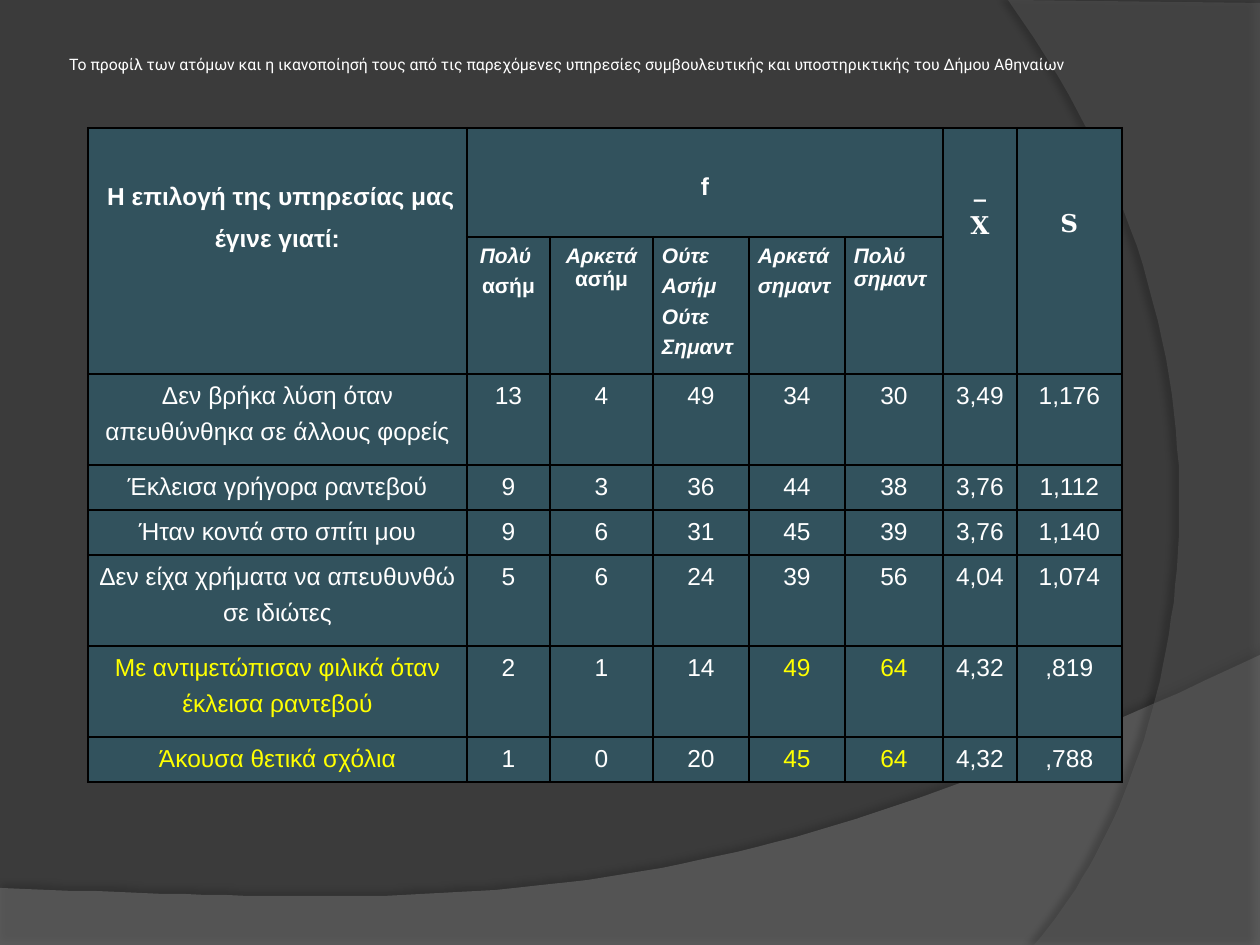
from pptx import Presentation, util as u
from pptx.dml.color import RGBColor
from pptx.enum import text
from pptx.oxml import parse_xml
from pptx.oxml.ns import nsdecls

PX = 914400 / 126
BACK = RGBColor(0x3B, 0x3B, 0x3B)
WAVE = RGBColor(0x7F, 0x7F, 0x7F)
ARC = RGBColor(0x5E, 0x5E, 0x5E)
TEAL = RGBColor(0x32, 0x52, 0x5D)
WHITE = RGBColor(0xFF, 0xFF, 0xFF)
GOLD = RGBColor(0xFF, 0xFF, 0x00)
BLACK = RGBColor(0, 0, 0)
MID = text.PP_ALIGN.CENTER
LEFT = text.PP_ALIGN.LEFT

COLS = [379, 83, 103, 96, 96, 98, 74, 105]
ROWS = [109, 137, 91, 45, 45, 91, 91, 45]
THICK_X = {0, 1, 6, 7, 8}
THICK_Y = {0, 1, 2, 8}

BODY = dict(name="Arial", size=u.Pt(14), bold=False, italic=False)
HEAD = dict(BODY, bold=True)
MATH = dict(HEAD, name="DejaVu Serif")
SUB = dict(HEAD, size=u.Pt(12))
LEAN = dict(SUB, italic=True)

TITLE = ("Το προφίλ των ατόμων και η ικανοποίησή τους από τις παρεχόμενες "
         "υπηρεσίες συμβουλευτικής και υποστηρικτικής του Δήμου Αθηναίων")
TOPS = [
    (0, 42, [(" Η επιλογή της υπηρεσίας μας έγινε γιατί:", 1.5)], HEAD),
    (1, 37, [("f", 1.3)], HEAD),
    (6, 37, [("_", 1.3), ("Χ", 1.3)], MATH),
    (7, 73, [("S", 1.3)], MATH),
]
SUBS = [
    (MID, [("Πολύ ", 1.3, LEAN), ("ασήμ", 1.3, SUB)]),
    (MID, [("Αρκετά", 1.3, LEAN), ("ασήμ", 1, SUB)]),
    (LEFT, [(word, 1.3, LEAN) for word in ("Ούτε", "Ασήμ", "Ούτε", "Σημαντ")]),
    (LEFT, [("Αρκετά", 1.3, LEAN), ("σημαντ", 1.3, LEAN)]),
    (LEFT, [("Πολύ", 1.3, LEAN), ("σημαντ", 1, LEAN)]),
]
DATA = [
    ("Δεν βρήκα λύση όταν απευθύνθηκα σε άλλους φορείς", "13 4 49 34 30 3,49 1,176"),
    ("Έκλεισα γρήγορα ραντεβού", "9 3 36 44 38 3,76 1,112"),
    ("Ήταν κοντά στο σπίτι μου", "9 6 31 45 39 3,76 1,140"),
    ("Δεν είχα χρήματα να απευθυνθώ σε ιδιώτες", "5 6 24 39 56 4,04 1,074"),
    ("Με αντιμετώπισαν φιλικά όταν έκλεισα ραντεβού", "2 1 14 49 64 4,32 ,819"),
    ("Άκουσα θετικά σχόλια", "1 0 20 45 64 4,32 ,788"),
]
GOLD_ROWS = {6, 7}
GOLD_COLS = {0, 4, 5}


def px(n):
    return u.Emu(round(n * PX))


def put(obj, vals):
    for key, val in vals.items():
        setattr(obj, key, val)


def curve(p, steps=60):
    pts = []
    for i in range(1, steps + 1):
        t = i / steps
        mix = ((1 - t) ** 3, 3 * t * (1 - t) ** 2, 3 * t * t * (1 - t), t ** 3)
        pts.append(tuple(sum(m * q[k] for m, q in zip(mix, p)) for k in (0, 1)))
    return pts


def sweep(slide, edge, bend, color, alpha, shade):
    form = slide.shapes.build_freeform(*edge[0], scale=PX)
    form.add_line_segments(edge[1:] + curve([edge[-1]] + bend), close=True)
    shape = form.convert_to_shape()
    shape.fill.solid()
    shape.fill.fore_color.rgb = color
    shape.line.fill.background()
    shape.shadow.inherit = False
    props = shape._element.spPr
    tint = props.find(".//{*}srgbClr")
    tint.append(parse_xml(f'<a:alpha {nsdecls("a")} val="{alpha * 1000}"/>'))
    dark, dist, turn = shade
    props.find("{*}effectLst").append(parse_xml(
        f'<a:outerShdw {nsdecls("a")} blurRad="{u.Pt(4)}" dist="{u.Pt(dist)}" '
        f'dir="{turn * 60000}" rotWithShape="0"><a:srgbClr val="{BLACK}">'
        f'<a:alpha val="{dark * 1000}"/></a:srgbClr></a:outerShdw>'))


def head(slide):
    title = slide.shapes.title
    put(title, dict(left=px(63), top=px(38), width=px(1029), height=px(70)))
    frame = title.text_frame
    put(frame, dict(word_wrap=True, auto_size=text.MSO_AUTO_SIZE.NONE,
                    vertical_anchor=text.MSO_ANCHOR.MIDDLE, margin_left=px(6),
                    margin_right=px(6), margin_top=px(6), margin_bottom=px(24)))
    frame.text = TITLE
    para = frame.paragraphs[0]
    para.alignment = LEFT
    font = para.runs[0].font
    put(font, dict(name="Roboto", size=u.Pt(9), bold=False))
    font.color.rgb = WHITE
    slide.shapes._spTree.append(title._element)


def write(cell, lines, align=MID, color=WHITE, top=0):
    put(cell, dict(margin_left=px(9), margin_right=px(9), margin_top=px(top),
                   margin_bottom=0, vertical_anchor=text.MSO_ANCHOR.TOP))
    frame = cell.text_frame
    for i, (word, gap, style) in enumerate(lines):
        para = frame.add_paragraph() if i else frame.paragraphs[0]
        put(para, dict(alignment=align, line_spacing=float(gap)))
        run = para.add_run()
        run.text = word
        put(run.font, style)
        run.font.color.rgb = color


def frame_cell(cell, row, col):
    props = cell._tc.get_or_add_tcPr()
    right = col + cell.span_width if cell.is_merge_origin else col + 1
    base = row + cell.span_height if cell.is_merge_origin else row + 1
    sides = [("L", col in THICK_X), ("R", right in THICK_X),
             ("T", row in THICK_Y), ("B", base in THICK_Y)]
    for side, thick in sides:
        props.append(parse_xml(
            f'<a:ln{side} {nsdecls("a")} w="{u.Pt(1.5 if thick else 1)}">'
            f'<a:solidFill><a:srgbClr val="{BLACK}"/></a:solidFill></a:ln{side}>'))
    cell.fill.solid()
    cell.fill.fore_color.rgb = TEAL


def grid(slide):
    table = slide.shapes.add_table(len(ROWS), len(COLS), px(88), px(128),
                                   px(sum(COLS)), px(sum(ROWS))).table
    put(table, dict(first_row=False, horz_banding=False))
    for col, size in zip(table.columns, COLS):
        col.width = px(size)
    for row, size in zip(table.rows, ROWS):
        row.height = px(size)
    for col in (0, 6, 7):
        table.cell(0, col).merge(table.cell(1, col))
    table.cell(0, 1).merge(table.cell(0, 5))
    for col, top, lines, style in TOPS:
        write(table.cell(0, col), [(*line, style) for line in lines], top=top)
    for col, (align, lines) in enumerate(SUBS, 1):
        write(table.cell(1, col), lines, align)
    for row, (label, nums) in enumerate(DATA, 2):
        for col, word in enumerate([label] + nums.split()):
            gold = row in GOLD_ROWS and col in GOLD_COLS
            write(table.cell(row, col), [(word, 1.3, BODY)],
                  color=GOLD if gold else WHITE)
    for row in range(len(ROWS)):
        for col in range(len(COLS)):
            cell = table.cell(row, col)
            if not cell.is_spanned:
                frame_cell(cell, row, col)


def main():
    deck = Presentation()
    put(deck, dict(slide_width=px(1260), slide_height=px(945)))
    slide = deck.slides.add_slide(deck.slide_layouts[5])
    slide.background.fill.solid()
    slide.background.fill.fore_color.rgb = BACK
    sweep(slide, [(0, 888), (0, 945), (1260, 945), (1260, 655)],
          [(704, 919), (493, 906), (0, 888)], WAVE, 45, (35, 3.5, 270))
    sweep(slide, [(1260, 3), (1260, 945), (1034, 945)],
          [(1178, 780), (1283, 378), (1008, 0)], ARC, 40, (45, 4, 180))
    grid(slide)
    head(slide)
    deck.save("out.pptx")


if __name__ == "__main__":
    main()
